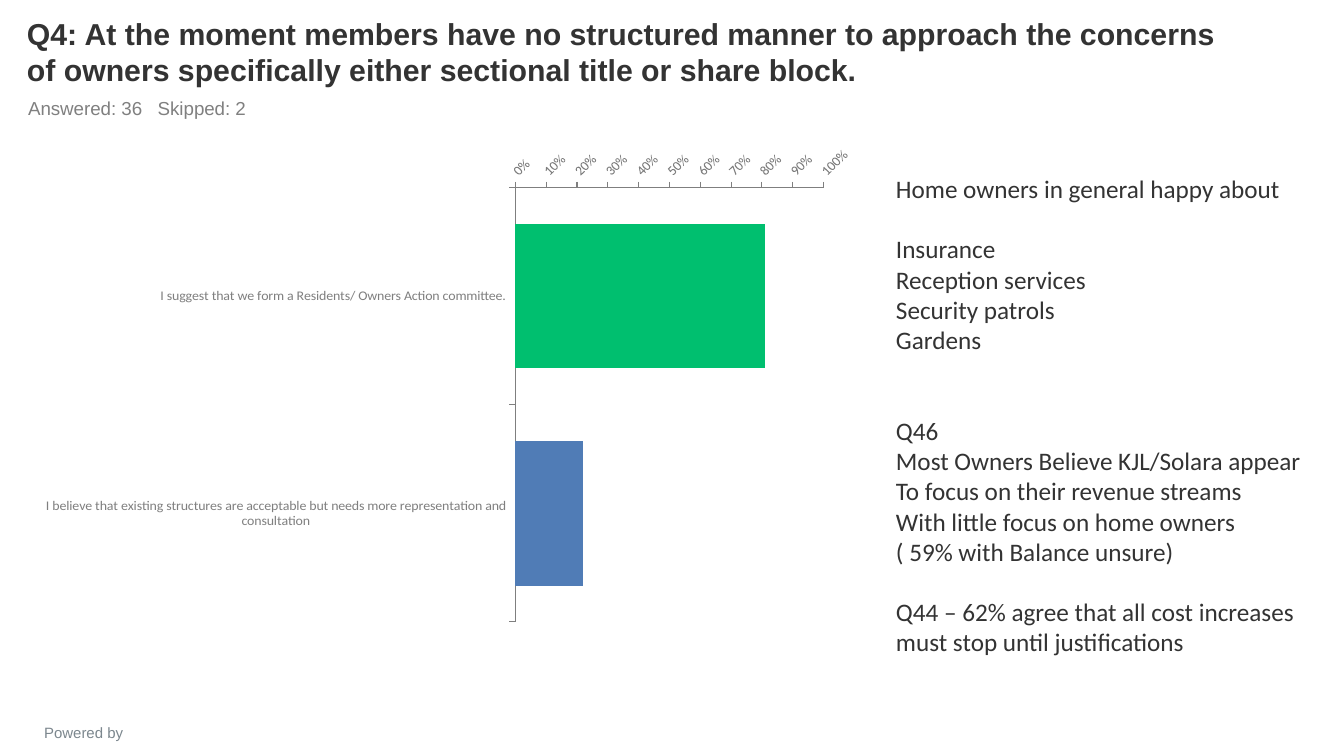
from dataclasses import dataclass

from lxml import etree
from pptx import Presentation
from pptx import util as u
from pptx.chart import data as chart_data
from pptx.dml import color
from pptx.enum import chart as ch
from pptx.enum import text as t
from pptx.oxml import ns


@dataclass(frozen=True)
class Theme:
    """Colours, fonts and type sizes of the slide."""
    ink: str = "333333"
    muted: str = "808080"
    axis: str = "7F7F7F"
    footer: str = "7C878E"
    agree: str = "00BF6F"
    keep: str = "507CB6"
    heading_font: str = "Arial"
    body_font: str = "Calibri"
    title_size: float = 21.6
    count_size: float = 13.33
    footer_size: float = 10.7
    note_size: float = 18
    axis_size: float = 10


THEME = Theme()
NOTE_LINE = 21.6
TITLE = ("Q4: At the moment members have no structured manner to approach the concerns "
         "of owners specifically either sectional title or share block.")
ANSWERS = [
    ("I suggest that we form a Residents/ Owners Action committee.", 0.81, THEME.agree),
    ("I believe that existing structures are acceptable but needs more "
     "representation and consultation", 0.22, THEME.keep),
]
NOTES = [
    ("Home owners in general happy about", 1),
    ("Insurance", 0),
    ("Reception services", 0),
    ("Security patrols", 0),
    ("Gardens", 2),
    ("Q46", 0),
    ("Most Owners Believe KJL/Solara appear", 0),
    ("To focus on their revenue streams", 0),
    ("With little focus on home owners", 0),
    ("( 59% with Balance unsure)", 1),
    ("Q44 – 62% agree that all cost increases", 0),
    ("must stop until justifications", 0),
]


def rgb(code):
    """Turn a hex code into a colour."""
    return color.RGBColor.from_string(code)


def style_font(font, size, ink, family, bold=False):
    """Apply size, colour, family and weight to a font."""
    font.size, font.name, font.bold = u.Pt(size), family, bold
    font.color.rgb = rgb(ink)


def add_text(slide, lines, box, *, size, ink, family, bold=False,
             align=t.PP_ALIGN.LEFT, anchor=t.MSO_ANCHOR.TOP):
    """Add a text box of (line, blank lines after) pairs."""
    frame = slide.shapes.add_textbox(*map(u.Cm, box)).text_frame
    frame.word_wrap = True
    frame.vertical_anchor = anchor
    for index, (line, gap) in enumerate(lines):
        paragraph = frame.add_paragraph() if index else frame.paragraphs[0]
        paragraph.alignment = align
        paragraph.space_after = u.Pt(gap * NOTE_LINE)
        run = paragraph.add_run()
        run.text = line
        style_font(run.font, size, ink, family, bold)
    return frame


def style_axis(axis):
    """Give an axis its line, outward ticks and small grey labels."""
    axis.has_major_gridlines = False
    axis.major_tick_mark = ch.XL_TICK_MARK.OUTSIDE
    axis.minor_tick_mark = ch.XL_TICK_MARK.NONE
    axis.format.line.color.rgb = rgb(THEME.axis)
    axis.format.line.width = u.Pt(0.75)
    style_font(axis.tick_labels.font, THEME.axis_size, THEME.axis, THEME.body_font)


def place_plot(chart, **bounds):
    """Fix the inner plot area as fractions of the chart."""
    plot_area = chart.plots[0]._element.getparent()
    for old in plot_area.findall(ns.qn("c:layout")):
        plot_area.remove(old)
    layout = etree.Element(ns.qn("c:layout"))
    manual = etree.SubElement(layout, ns.qn("c:manualLayout"))
    settings = {"layoutTarget": "inner", "xMode": "edge", "yMode": "edge", **bounds}
    for tag, value in settings.items():
        etree.SubElement(manual, ns.qn(f"c:{tag}")).set("val", str(value))
    plot_area.insert(0, layout)


def add_answer_chart(slide, answers, box):
    """Add the bar chart with one coloured bar per answer."""
    labels, shares, fills = zip(*answers)
    source = chart_data.CategoryChartData(number_format="0%")
    source.categories = labels
    source.add_series("Series 1", shares)
    chart = slide.shapes.add_chart(
        ch.XL_CHART_TYPE.BAR_CLUSTERED, *map(u.Cm, box), source).chart
    chart.has_legend = chart.has_title = False
    style_font(chart.font, THEME.note_size, THEME.ink, THEME.body_font)

    bars = chart.plots[0]
    bars.gap_width, bars.overlap, bars.vary_by_categories = 50, 100, False
    series = bars.series[0]
    series.format.fill.solid()
    series.format.fill.fore_color.rgb = rgb(THEME.agree)
    for index, fill in enumerate(fills):
        bar = series.points[index].format.fill
        bar.solid()
        bar.fore_color.rgb = rgb(fill)

    answer_axis, share_axis = chart.category_axis, chart.value_axis
    for axis in (answer_axis, share_axis):
        style_axis(axis)
    answer_axis.reverse_order = True
    answer_axis.crosses = ch.XL_AXIS_CROSSES.MINIMUM
    answer_axis.tick_label_position = ch.XL_TICK_LABEL_POSITION.LOW
    share_axis.minimum_scale, share_axis.maximum_scale = 0, 1
    share_axis.major_unit = 0.1
    share_axis.tick_labels.number_format = "0%"
    share_axis.tick_labels.number_format_is_linked = False
    share_axis._element.find(f"{ns.qn('c:txPr')}/{ns.qn('a:bodyPr')}").set("rot", "-2700000")
    place_plot(chart, x=0.595, y=0.02, w=0.378, h=0.88)


def main():
    """Build the survey slide and save it."""
    deck = Presentation()
    deck.slide_width, deck.slide_height = u.Cm(33.87), u.Cm(19.05)
    slide = deck.slides.add_slide(deck.slide_layouts[6])
    add_text(slide, [("Powered by", 0)], (0.16, 18.12, 3.9, 0.6),
             size=THEME.footer_size, ink=THEME.footer, family=THEME.heading_font,
             align=t.PP_ALIGN.CENTER)
    add_text(slide, [(TITLE, 0)], (0.43, 0.3, 30.48, 2.03),
             size=THEME.title_size, ink=THEME.ink, family=THEME.heading_font,
             bold=True, anchor=t.MSO_ANCHOR.BOTTOM)
    counts = add_text(slide, [("Answered: 36   Skipped: 2", 0)],
                      (0.46, 2.31, 30.48, 0.89), size=THEME.count_size,
                      ink=THEME.muted, family=THEME.heading_font)
    counts.paragraphs[0].space_before = u.Pt(2.7)
    add_answer_chart(slide, ANSWERS, (0.76, 3.71, 20.68, 13.21))
    add_text(slide, NOTES, (22.33, 4.24, 11.25, 12.57),
             size=THEME.note_size, ink=THEME.ink, family=THEME.body_font)
    deck.save("out.pptx")


if __name__ == "__main__":
    main()
